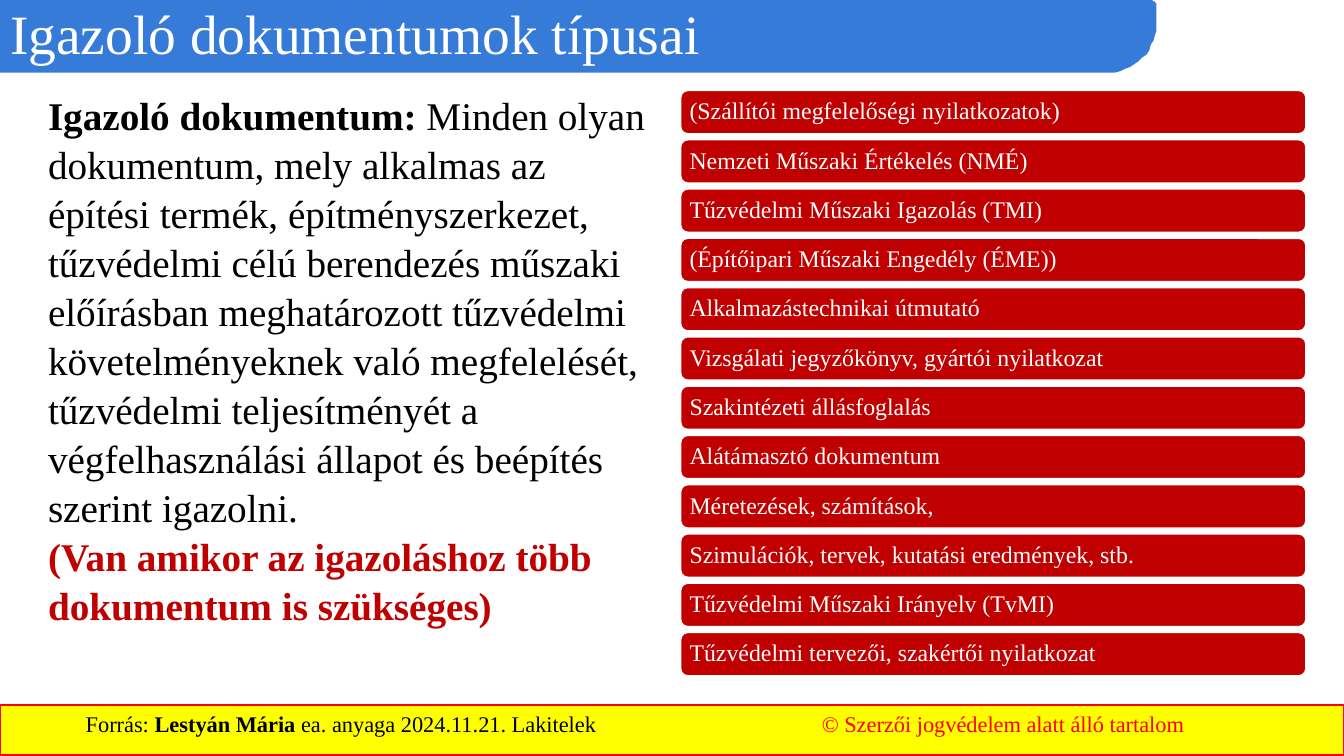
from pptx import Presentation
from pptx.dml.color import RGBColor
from pptx.enum.shapes import MSO_SHAPE
from pptx.enum.text import MSO_ANCHOR, PP_ALIGN
from pptx.util import Pt

ROUNDED, RECTANGLE = MSO_SHAPE.ROUNDED_RECTANGLE, MSO_SHAPE.RECTANGLE
TOP, MIDDLE = MSO_ANCHOR.TOP, MSO_ANCHOR.MIDDLE
LEFT, CENTER = PP_ALIGN.LEFT, PP_ALIGN.CENTER
RED, WHITE, BLACK = "C00000", "FFFFFF", "000000"


def color(value):
    return RGBColor.from_string(value)


def add_runs(paragraph, size, *parts):
    for text, value, bold in parts:
        run = paragraph.add_run()
        run.text = text
        run.font.name = "Times New Roman"
        run.font.size = Pt(size)
        run.font.bold = bold
        run.font.color.rgb = color(value)


prs = Presentation()
prs.slide_width, prs.slide_height = Pt(960), Pt(540)
slide = prs.slides.add_slide(prs.slide_layouts[5])
shapes = slide.shapes

# Blue banner with two rounded corners on the right
corners = [
    [(826.5, 13.5), (826.5, 36), (812, 52.3), (787, 52.3)],
    [(819.5, 0), (824.3, 0), (826.5, 1.5), (826.5, 5.5)],
]
outline = []
for a, b, c, d in corners:
    for step in range(17):
        t = step / 16
        weights = (1 - t) ** 3, 3 * t * (1 - t) ** 2, 3 * t * t * (1 - t), t ** 3
        outline.append(tuple(sum(w * p[axis] for w, p in zip(weights, (a, b, c, d)))
                             for axis in (0, 1)))
    if a[1]:
        outline += [(0, 52.3), (0, 0)]
builder = shapes.build_freeform(*outline[0], scale=Pt(1))
builder.add_line_segments(outline[1:], close=True)
banner = builder.convert_to_shape()
banner.shadow.inherit = False
banner.fill.solid()
banner.fill.fore_color.rgb = color("377BD9")
banner.line.fill.background()

# Title, brought in front of the banner
title = shapes.title
title.left, title.top, title.width, title.height = Pt(0), Pt(0), Pt(799), Pt(52.5)
title.text_frame.vertical_anchor = MIDDLE
heading = title.text_frame.paragraphs[0]
heading.alignment = LEFT
heading.line_spacing = 0.9
add_runs(heading, 39.6, ("Igazoló dokumentumok típusai", WHITE, False))
banner.element.addnext(title.element)

# Definition on the left
definition = shapes.add_textbox(Pt(27.2), Pt(60.5), Pt(447), Pt(425.5)).text_frame
definition.word_wrap = True
meaning, remark = definition.paragraphs[0], definition.add_paragraph()
meaning.line_spacing = remark.line_spacing = 1.04
add_runs(meaning, 28, ("Igazoló dokumentum: ", BLACK, True),
         ("Minden olyan dokumentum, mely alkalmas az építési termék, építményszerkezet, "
          "tűzvédelmi célú berendezés műszaki előírásban meghatározott tűzvédelmi "
          "követelményeknek való megfelelését, tűzvédelmi teljesítményét a "
          "végfelhasználási állapot és beépítés szerint igazolni.", BLACK, False))
add_runs(remark, 28,
         ("(Van amikor az igazoláshoz több dokumentum is szükséges)", RED, True))

# Document types on the right
document_types = [
    "(Szállítói megfelelőségi nyilatkozatok)",
    "Nemzeti Műszaki Értékelés (NMÉ)",
    "Tűzvédelmi Műszaki Igazolás (TMI)",
    "(Építőipari Műszaki Engedély (ÉME))",
    "Alkalmazástechnikai útmutató",
    "Vizsgálati jegyzőkönyv, gyártói nyilatkozat",
    "Szakintézeti állásfoglalás",
    "Alátámasztó dokumentum",
    "Méretezések, számítások,",
    "Szimulációk, tervek, kutatási eredmények, stb.",
    "Tűzvédelmi Műszaki Irányelv (TvMI)",
    "Tűzvédelmi tervezői, szakértői nyilatkozat",
]
for row, document_type in enumerate(document_types):
    bar = shapes.add_shape(ROUNDED, Pt(486), Pt(64.4 + 35.2 * row), Pt(447), Pt(31.4))
    bar.shadow.inherit = False
    bar.fill.solid()
    bar.fill.fore_color.rgb = color(RED)
    bar.line.color.rgb = color(WHITE)
    bar.line.width = Pt(1.5)
    label = bar.text_frame
    label.margin_left = label.margin_right = Pt(5)
    label.margin_top = label.margin_bottom = Pt(3)
    label.vertical_anchor = MIDDLE
    label.paragraphs[0].alignment = LEFT
    label.paragraphs[0].line_spacing = 0.9
    add_runs(label.paragraphs[0], 17, (document_type, WHITE, False))

# Footer in two columns
footer = shapes.add_shape(RECTANGLE, Pt(0), Pt(503.5), Pt(960), Pt(36))
footer.shadow.inherit = False
footer.fill.solid()
footer.fill.fore_color.rgb = color("FFFF00")
footer.line.color.rgb = color("FF0000")
footer.line.width = Pt(1.5)
credits = footer.text_frame
credits.vertical_anchor = TOP
credits.paragraphs[0].alignment = CENTER
add_runs(credits.paragraphs[0], 16, ("Forrás: ", BLACK, False),
         ("Lestyán Mária ", BLACK, True),
         ("ea. anyaga 2024.11.21. Lakitelek", BLACK, False))
rights = credits.add_paragraph()
rights.alignment = CENTER
add_runs(rights, 16, ("© Szerzői jogvédelem alatt álló tartalom", "FF0000", False))
footer.element.txBody.bodyPr.set("numCol", "2")

prs.save("out.pptx")
